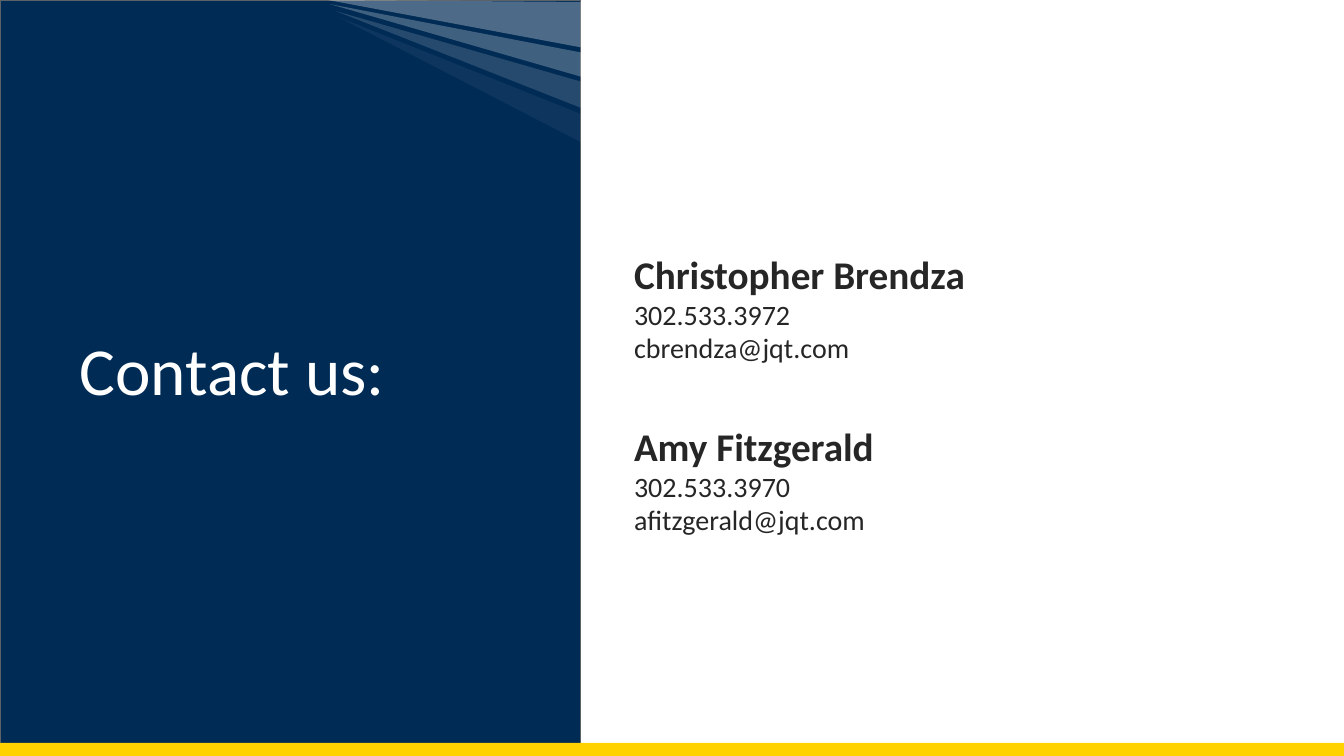
from lxml.etree import SubElement
from pptx import Presentation
from pptx.dml.color import RGBColor
from pptx.enum.shapes import MSO_SHAPE
from pptx.enum.text import MSO_ANCHOR, MSO_AUTO_SIZE
from pptx.oxml.ns import qn
from pptx.util import Inches, Pt

THEME = {
    "navy": RGBColor.from_string("002B55"),
    "outline": RGBColor.from_string("5C6368"),
    "yellow": RGBColor.from_string("FFD200"),
    "white": RGBColor.from_string("FFFFFF"),
    "text": RGBColor.from_string("262626"),
    "font": "Calibri",
    "title": Pt(48),
    "name": Pt(28),
    "detail": Pt(20),
}
WIDTH, HEIGHT = 13.33, 7.5
PANEL_WIDTH = 5.76
BAR_HEIGHT = 0.13

CONTACTS = [
    ("Christopher Brendza", "302.533.3972", "cbrendza@jqt.com"),
    ("Amy Fitzgerald", "302.533.3970", "afitzgerald@jqt.com"),
]

# Each ray: left tip, top and bottom on the panel's edge, opacity in percent
RAYS = [
    ((3.25, 0), 0.02, 0.47, 30),
    ((3.36, 0.17), 1.13, 1.41, 5),
    ((3.27, 0.04), 0.52, 0.76, 25),
    ((3.33, 0.11), 0.81, 1.07, 15),
]


def paint(shape, color):
    shape.shadow.inherit = False
    shape.fill.solid()
    shape.fill.fore_color.rgb = color
    shape.line.fill.background()


def style(paragraph, text, size, color, bold=False):
    paragraph.text = text
    paragraph.font.name = THEME["font"]
    paragraph.font.size = size
    paragraph.font.bold = bold
    paragraph.font.color.rgb = color


presentation = Presentation()
presentation.slide_width = Inches(WIDTH)
presentation.slide_height = Inches(HEIGHT)
slide = presentation.slides.add_slide(presentation.slide_layouts[6])
shapes = slide.shapes

panel = shapes.add_shape(
    MSO_SHAPE.RECTANGLE, 0, 0, Inches(PANEL_WIDTH), Inches(HEIGHT))
paint(panel, THEME["navy"])
panel.line.color.rgb = THEME["outline"]
panel.line.width = Pt(1)

title_box = shapes.add_textbox(Inches(0.69), Inches(2.67), Inches(4.34), Inches(2.07))
title_box.text_frame.word_wrap = True
title_box.text_frame.vertical_anchor = MSO_ANCHOR.MIDDLE
title = title_box.text_frame.paragraphs[0]
title.line_spacing = 0.9
style(title, "Contact us:", THEME["title"], THEME["white"])

contact_box = shapes.add_textbox(Inches(6.19), Inches(2.19), Inches(6.52), Inches(3.53))
contact_frame = contact_box.text_frame
contact_frame.word_wrap = True
contact_frame.auto_size = MSO_AUTO_SIZE.SHAPE_TO_FIT_TEXT
contact_frame.vertical_anchor = MSO_ANCHOR.MIDDLE
contact_frame.margin_bottom = Inches(0.39)
for number, (name, *details) in enumerate(CONTACTS):
    if number == 0:
        paragraph = contact_frame.paragraphs[0]
    else:
        paragraph = contact_frame.add_paragraph()
        paragraph.space_before = Pt(24.4)
    paragraph.line_spacing = 1.5
    style(paragraph, name, THEME["name"], THEME["text"], bold=True)
    for detail in details:
        style(contact_frame.add_paragraph(), detail, THEME["detail"], THEME["text"])

for (tip_x, tip_y), top, bottom, opacity in RAYS:
    edge = Inches(PANEL_WIDTH)
    builder = shapes.build_freeform(edge, Inches(top))
    builder.add_line_segments(
        [(Inches(tip_x), Inches(tip_y)), (edge, Inches(bottom))], close=True)
    ray = builder.convert_to_shape()
    paint(ray, THEME["white"])
    color = ray.element.spPr.find(qn("a:solidFill"))[0]
    SubElement(color, qn("a:alpha"), val=str(opacity * 1000))

bar = shapes.add_shape(
    MSO_SHAPE.RECTANGLE, 0, Inches(HEIGHT - BAR_HEIGHT),
    Inches(WIDTH), Inches(BAR_HEIGHT))
paint(bar, THEME["yellow"])

presentation.save("out.pptx")
